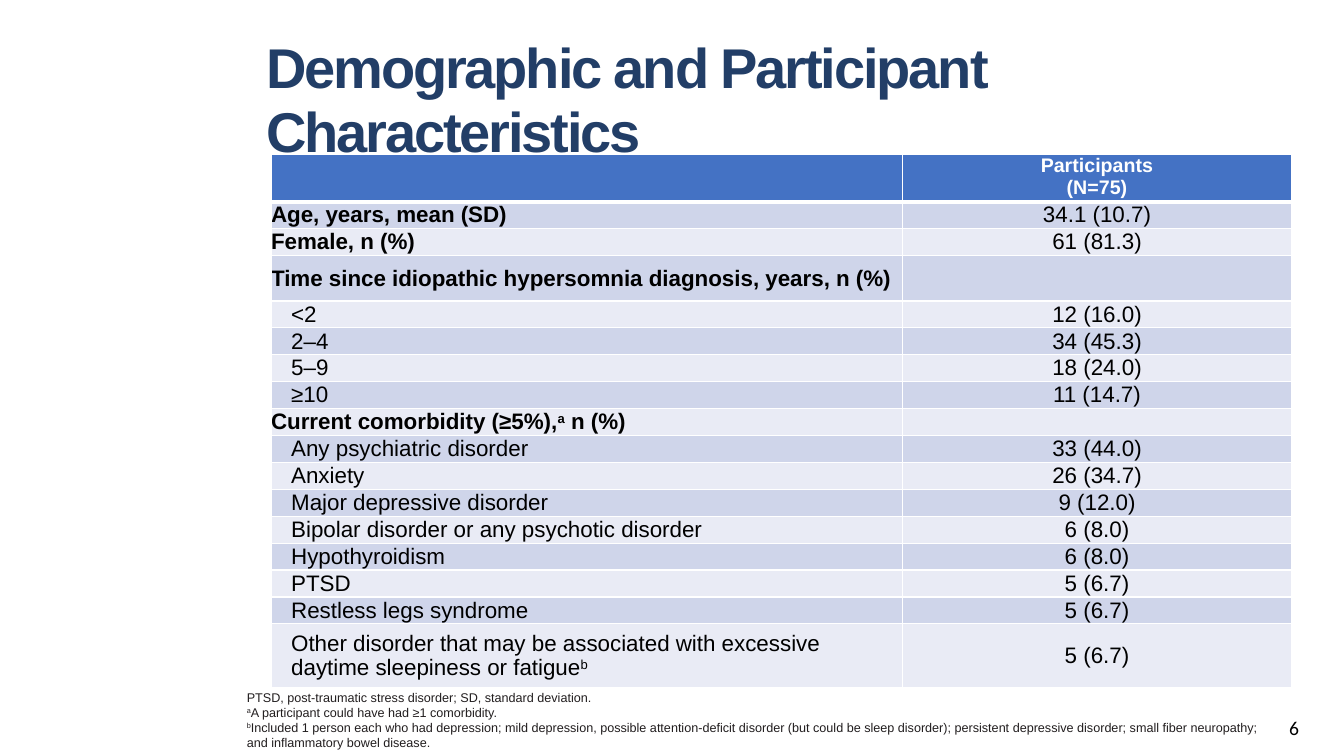
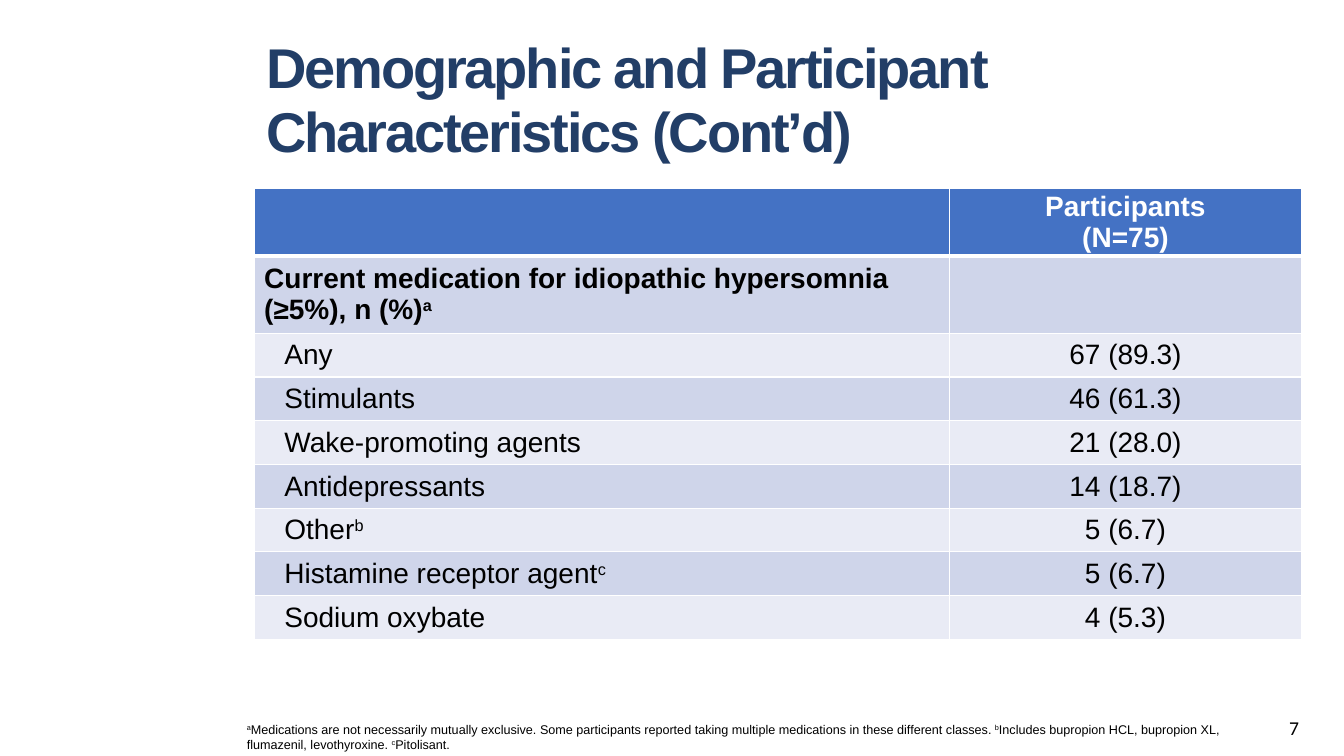
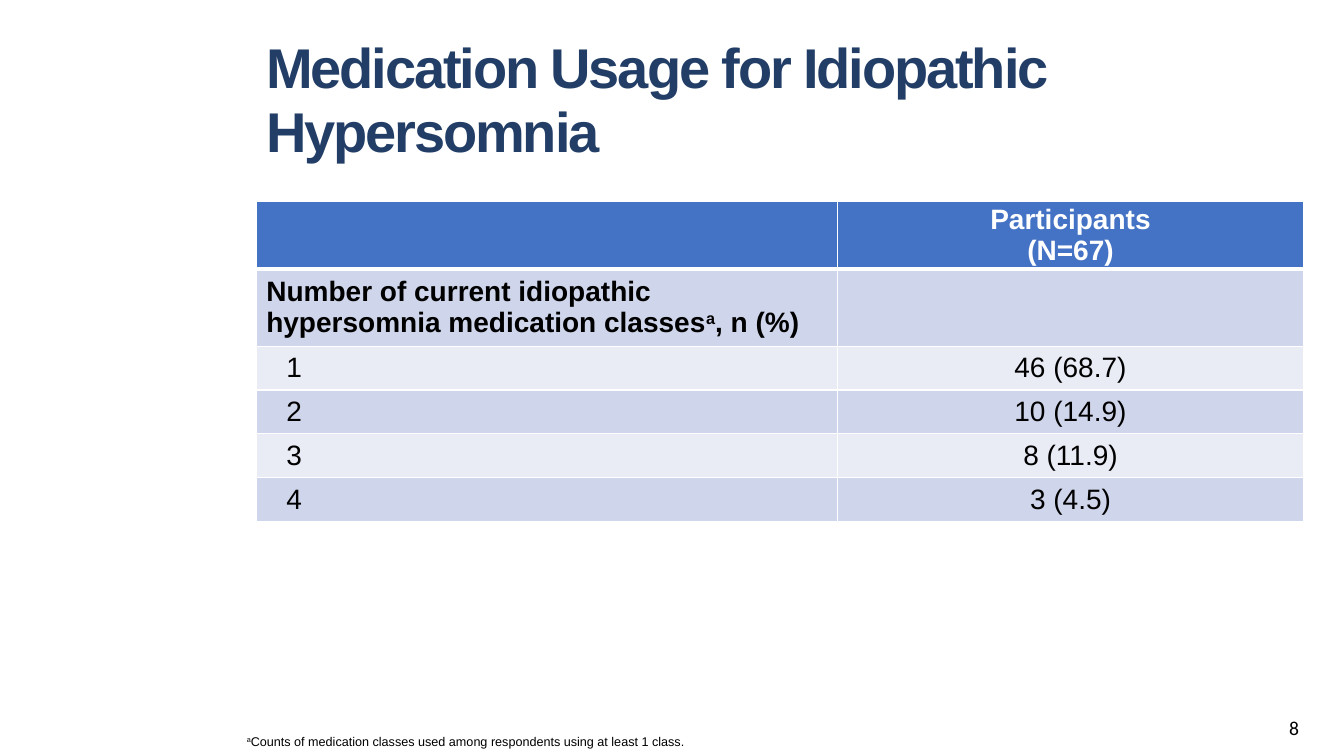
import copy
import dataclasses

import lxml.etree
import pptx
import pptx.dml.color
import pptx.enum.text
import pptx.oxml.ns
import pptx.util

Pt = pptx.util.Pt
qn = pptx.oxml.ns.qn
ALIGN = pptx.enum.text.PP_ALIGN
ANCHOR = pptx.enum.text.MSO_ANCHOR


@dataclasses.dataclass(frozen=True)
class Theme:
    font: str = "Arial"
    number_font: str = "Calibri"
    navy: str = "223E67"
    black: str = "000000"
    charcoal: str = "221E1F"
    white: str = "FFFFFF"
    header: str = "4472C4"
    bands: tuple = ("CFD5EA", "E9EBF5")
    title_size: int = 40
    note_size: int = 9
    number_size: int = 14
    title_tracking: int = -150
    title_spacing: float = 0.95
    thin: int = 1
    thick: int = 3
    indent: float = 14.4
    padding: tuple = (7.2, 3.6)


THEME = Theme()


@dataclasses.dataclass(frozen=True)
class Box:
    left: float
    top: float
    width: float
    height: float

    def lengths(self):
        return [Pt(side) for side in (self.left, self.top, self.width, self.height)]


@dataclasses.dataclass(frozen=True)
class Row:
    label: str
    value: str = ""
    height: float = 0
    heading: bool = False
    padded: bool = False


@dataclasses.dataclass(frozen=True)
class TableStyle:
    header_size: int
    body_size: int
    header_height: float
    row_height: float
    padded: bool
    header_anchor: ANCHOR


COMPACT = TableStyle(14, 16, 33.1, 18.8, False, ANCHOR.TOP)
ROOMY = TableStyle(20, 20, 45.5, 29.6, True, ANCHOR.MIDDLE)

NUMBER_BOX = Box(913.7, 507.6, 30.2, 20.2)


def write(paragraph, text, size, color, bold=False, font=THEME.font):
    first, *rest = text.split("^")
    paragraph.text = first
    for index, part in enumerate(rest):
        run = paragraph.add_run()
        run.text = part
        if index % 2 == 0:
            run.font._element.set("baseline", "30000")
    for run in paragraph.runs:
        run.font.name = font
        run.font.size = Pt(size)
        run.font.bold = bold
        run.font.color.rgb = pptx.dml.color.RGBColor.from_string(color)
    for line_break in paragraph._p.findall(qn("a:br")):
        line_break.insert(0, copy.deepcopy(paragraph.runs[0].font._element))
    if not text:
        lxml.etree.SubElement(paragraph._p, qn("a:endParaRPr"), sz=str(size * 100))


def add_text(slide, box, lines, **style):
    frame = slide.shapes.add_textbox(*box.lengths()).text_frame
    frame.word_wrap = True
    frame.text = "\n".join(lines)
    for paragraph, line in zip(frame.paragraphs, lines):
        write(paragraph, line, **style)
    return frame


def add_title(slide, box, title):
    frame = add_text(slide, box, [title], size=THEME.title_size, color=THEME.navy, bold=True)
    heading = frame.paragraphs[0]
    heading.line_spacing = THEME.title_spacing
    heading.runs[0].font._element.set("spc", str(THEME.title_tracking))


def add_footer(slide, box, notes, number, color):
    add_text(slide, box, notes, size=THEME.note_size, color=color)
    add_text(slide, NUMBER_BOX, [str(number)], size=THEME.number_size,
             color=THEME.black, font=THEME.number_font)


def set_borders(cell, top, bottom):
    properties = cell._tc.get_or_add_tcPr()
    sides = (("L", THEME.thin), ("R", THEME.thin), ("T", top), ("B", bottom))
    for side, width in sides:
        line = lxml.etree.SubElement(properties, qn("a:ln" + side), w=str(Pt(width)))
        fill = lxml.etree.SubElement(line, qn("a:solidFill"))
        lxml.etree.SubElement(fill, qn("a:srgbClr"), val=THEME.white)


def fill_cell(cell, text, fill, size, color, bold=False, padded=False, anchor=ANCHOR.MIDDLE,
              align=ALIGN.LEFT, indent=0, top=THEME.thin, bottom=THEME.thin):
    set_borders(cell, top, bottom)
    cell.fill.solid()
    cell.fill.fore_color.rgb = pptx.dml.color.RGBColor.from_string(fill)
    across, down = THEME.padding if padded else (0, 0)
    cell.margin_left = cell.margin_right = Pt(across)
    cell.margin_top = cell.margin_bottom = Pt(down)
    cell.vertical_anchor = anchor
    paragraph = cell.text_frame.paragraphs[0]
    write(paragraph, text, size, color, bold)
    paragraph.alignment = align
    if indent:
        paragraph._p.get_or_add_pPr().set("marL", str(Pt(indent)))


def add_participants(slide, left, top, widths, count, rows, style):
    heights = [style.header_height] + [row.height or style.row_height for row in rows]
    box = Box(left, top, sum(widths), sum(heights))
    table = slide.shapes.add_table(len(heights), len(widths), *box.lengths()).table
    table.horz_banding = False
    for column, width in zip(table.columns, widths):
        column.width = Pt(width)
    for table_row, height in zip(table.rows, heights):
        table_row.height = Pt(height)

    for column, text in enumerate(("", f"Participants\v(N={count})")):
        fill_cell(table.cell(0, column), text, THEME.header, style.header_size, THEME.white,
                  bold=True, anchor=style.header_anchor, align=ALIGN.CENTER,
                  bottom=THEME.thick)
    for index, row in enumerate(rows):
        shared = dict(fill=THEME.bands[index % 2], size=style.body_size, color=THEME.black,
                      padded=style.padded or row.padded,
                      top=THEME.thin if index else THEME.thick)
        indent = 0 if row.heading else THEME.indent
        if row.padded:
            indent -= THEME.padding[0]
        fill_cell(table.cell(index + 1, 0), row.label, bold=row.heading, indent=indent, **shared)
        fill_cell(table.cell(index + 1, 1), row.value, align=ALIGN.CENTER, **shared)


CHARACTERISTICS = [
    Row("Age, years, mean (SD)", "34.1 (10.7)", heading=True),
    Row("Female, n (%)", "61 (81.3)", heading=True),
    Row("Time since idiopathic hypersomnia diagnosis, years, n (%)", height=32.4, heading=True),
    Row("<2", "12 (16.0)"),
    Row("2–4", "34 (45.3)"),
    Row("5–9", "18 (24.0)"),
    Row("≥10", "11 (14.7)"),
    Row("Current comorbidity (≥5%),^a^ n (%)", heading=True),
    Row("Any psychiatric disorder", "33 (44.0)"),
    Row("Anxiety", "26 (34.7)"),
    Row("Major depressive disorder", "9 (12.0)"),
    Row("Bipolar disorder or any psychotic disorder", "6 (8.0)"),
    Row("Hypothyroidism", "6 (8.0)"),
    Row("PTSD", "5 (6.7)"),
    Row("Restless legs syndrome", "5 (6.7)"),
    Row("Other disorder that may be associated with excessive daytime sleepiness or fatigue^b",
        "5 (6.7)", height=43.9, padded=True),
]

MEDICATIONS = [
    Row("Current medication for idiopathic hypersomnia (≥5%), n (%)^a", height=51, heading=True),
    Row("Any", "67 (89.3)"),
    Row("Stimulants", "46 (61.3)"),
    Row("Wake-promoting agents", "21 (28.0)"),
    Row("Antidepressants", "14 (18.7)"),
    Row("Other^b", "5 (6.7)"),
    Row("Histamine receptor agent^c", "5 (6.7)"),
    Row("Sodium oxybate", "4 (5.3)"),
]

CLASS_COUNTS = [
    Row("Number of current idiopathic hypersomnia medication classes^a^, n (%)",
        height=51, heading=True),
    Row("1", "46 (68.7)"),
    Row("2", "10 (14.9)"),
    Row("3", "8 (11.9)"),
    Row("4", "3 (4.5)"),
]

SLIDES = [
    dict(
        title="Demographic and Participant Characteristics",
        title_box=Box(183, 23, 728.6, 104.4),
        table=dict(left=193.6, top=110.5, widths=(451, 278), count=75,
                   rows=CHARACTERISTICS, style=COMPACT),
        notes=[
            "PTSD, post-traumatic stress disorder; SD, standard deviation.",
            "^a^A participant could have had ≥1 comorbidity.",
            "^b^Included 1 person each who had depression; mild depression, possible "
            "attention-deficit disorder (but could be sleep disorder); persistent depressive "
            "disorder; small fiber neuropathy; and inflammatory bowel disease.",
        ],
        note_box=Box(169.2, 489, 743, 51),
        note_color=THEME.charcoal,
    ),
    dict(
        title="Demographic and Participant Characteristics (Cont’d)",
        title_box=Box(183, 23, 728.6, 104.4),
        table=dict(left=181.5, top=134.7, widths=(496.8, 251.3), count=75,
                   rows=MEDICATIONS, style=ROOMY),
        notes=[
            "^a^Medications are not necessarily mutually exclusive. Some participants reported "
            "taking multiple medications in these different classes. ^b^Includes bupropion HCL, "
            "bupropion XL, flumazenil, levothyroxine. ^c^Pitolisant.",
        ],
        note_box=Box(169.2, 512, 748, 28),
        note_color=THEME.black,
    ),
    dict(
        title="Medication Usage for Idiopathic Hypersomnia",
        title_box=Box(183, 23, 663, 104.4),
        table=dict(left=183, top=144, widths=(415.4, 332.6), count=67,
                   rows=CLASS_COUNTS, style=ROOMY),
        notes=["^a^Counts of medication classes used among respondents using at least 1 class."],
        note_box=Box(169.2, 520.6, 790.8, 19.4),
        note_color=THEME.black,
    ),
]


def add_table_slide(deck, number, content):
    slide = deck.slides.add_slide(deck.slide_layouts[6])
    add_title(slide, content["title_box"], content["title"])
    add_participants(slide, **content["table"])
    add_footer(slide, content["note_box"], content["notes"], number, content["note_color"])


def main():
    deck = pptx.Presentation()
    deck.slide_width, deck.slide_height = Pt(960), Pt(540)
    for number, content in enumerate(SLIDES, start=6):
        add_table_slide(deck, number, content)
    deck.save("out.pptx")


if __name__ == "__main__":
    main()
